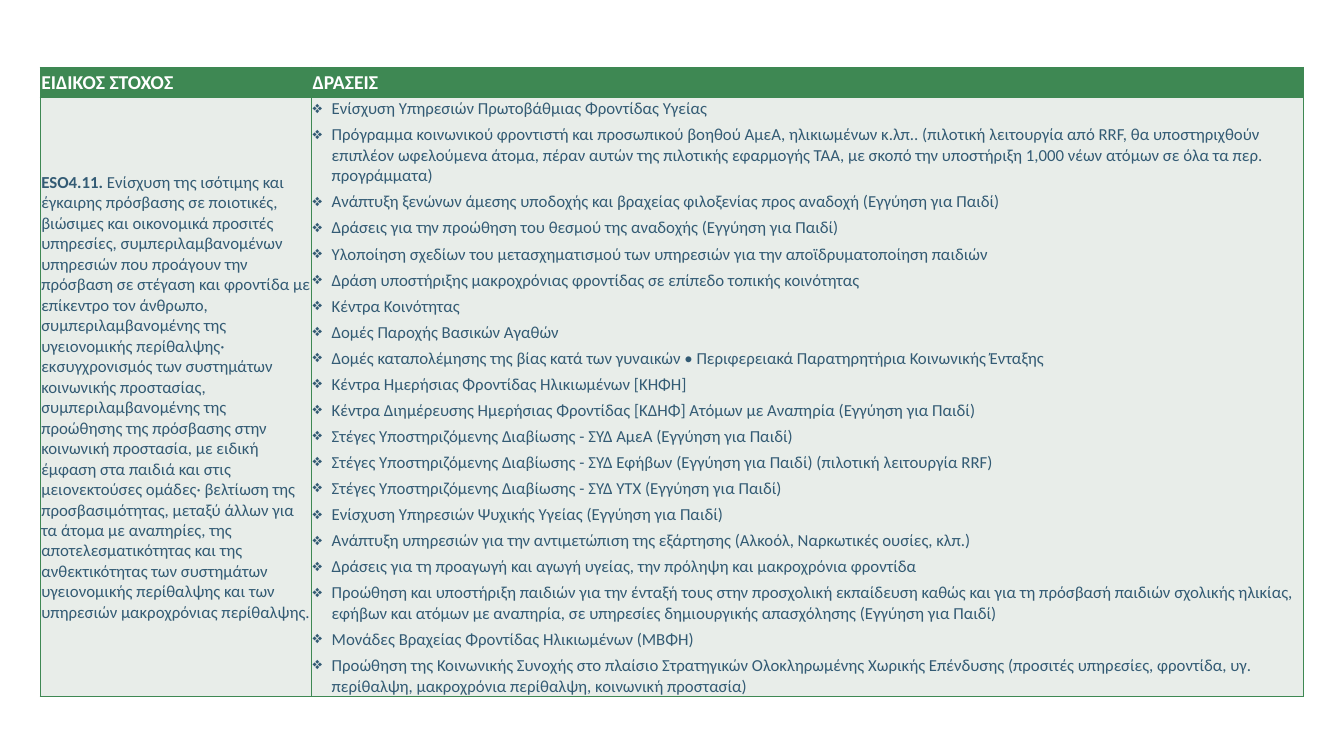
from lxml import etree
from pptx import Presentation
from pptx.dml.color import RGBColor
from pptx.enum.text import MSO_ANCHOR
from pptx.oxml.ns import qn
from pptx.util import Inches, Pt

MIDDLE = MSO_ANCHOR.MIDDLE
FONT = "Calibri"
GREEN, PALE, WHITE, SLATE = "3E8853", "E8EDE9", "FFFFFF", "335B74"

# Table geometry in inches
TABLE_LEFT, TABLE_TOP = 0.4, 0.67
COLUMNS = (2.69, 9.84)
ROWS = (0.3, 5.86)
BULLET_INDENT = 0.19

HEADINGS = ("ΕΙΔΙΚΟΣ ΣΤΟΧΟΣ", "ΔΡΑΣΕΙΣ")
GOAL_CODE = "ESO4.11. "
GOAL_TEXT = (
    "Ενίσχυση της ισότιμης και έγκαιρης πρόσβασης σε ποιοτικές, βιώσιμες και "
    "οικονομικά προσιτές υπηρεσίες, συμπεριλαμβανομένων υπηρεσιών που προάγουν την "
    "πρόσβαση σε στέγαση και φροντίδα με επίκεντρο τον άνθρωπο, συμπεριλαμβανομένης "
    "της υγειονομικής περίθαλψης· εκσυγχρονισμός των συστημάτων κοινωνικής προστασίας, "
    "συμπεριλαμβανομένης της προώθησης της πρόσβασης στην κοινωνική προστασία, με "
    "ειδική έμφαση στα παιδιά και στις μειονεκτούσες ομάδες· βελτίωση της "
    "προσβασιμότητας, μεταξύ άλλων για τα άτομα με αναπηρίες, της "
    "αποτελεσματικότητας και της ανθεκτικότητας των συστημάτων υγειονομικής "
    "περίθαλψης και των υπηρεσιών μακροχρόνιας περίθαλψης."
)
ACTIONS = (
    "Ενίσχυση Υπηρεσιών Πρωτοβάθμιας Φροντίδας Υγείας",
    "Πρόγραμμα κοινωνικού φροντιστή και προσωπικού βοηθού ΑμεΑ, ηλικιωμένων κ.λπ.. "
    "(πιλοτική λειτουργία από RRF, θα υποστηριχθούν επιπλέον ωφελούμενα άτομα, πέραν "
    "αυτών της πιλοτικής εφαρμογής ΤΑΑ, με σκοπό την υποστήριξη 1,000 νέων ατόμων σε "
    "όλα τα περ. προγράμματα)",
    "Ανάπτυξη ξενώνων άμεσης υποδοχής και βραχείας φιλοξενίας προς αναδοχή (Εγγύηση για Παιδί)",
    "Δράσεις για την προώθηση του θεσμού της αναδοχής (Εγγύηση για Παιδί)",
    "Υλοποίηση σχεδίων του μετασχηματισμού των υπηρεσιών για την αποϊδρυματοποίηση παιδιών",
    "Δράση υποστήριξης μακροχρόνιας φροντίδας σε επίπεδο τοπικής κοινότητας",
    "Κέντρα Κοινότητας",
    "Δομές Παροχής Βασικών Αγαθών",
    "Δομές καταπολέμησης της βίας κατά των γυναικών • Περιφερειακά Παρατηρητήρια "
    "Κοινωνικής Ένταξης",
    "Κέντρα Ημερήσιας Φροντίδας Ηλικιωμένων [ΚΗΦΗ]",
    "Κέντρα Διημέρευσης Ημερήσιας Φροντίδας [ΚΔΗΦ] Ατόμων με Αναπηρία (Εγγύηση για Παιδί)",
    "Στέγες Υποστηριζόμενης Διαβίωσης - ΣΥΔ ΑμεΑ (Εγγύηση για Παιδί)",
    "Στέγες Υποστηριζόμενης Διαβίωσης - ΣΥΔ Εφήβων (Εγγύηση για Παιδί) "
    "(πιλοτική λειτουργία RRF)",
    "Στέγες Υποστηριζόμενης Διαβίωσης - ΣΥΔ ΥΤΧ (Εγγύηση για Παιδί)",
    "Ενίσχυση Υπηρεσιών Ψυχικής Υγείας (Εγγύηση για Παιδί)",
    "Ανάπτυξη υπηρεσιών για την αντιμετώπιση της εξάρτησης (Αλκοόλ, Ναρκωτικές ουσίες, κλπ.)",
    "Δράσεις για τη προαγωγή και αγωγή υγείας, την πρόληψη και μακροχρόνια φροντίδα",
    "Προώθηση και υποστήριξη παιδιών για την ένταξή τους στην προσχολική εκπαίδευση "
    "καθώς και για τη πρόσβασή παιδιών σχολικής ηλικίας, εφήβων και ατόμων με αναπηρία, "
    "σε υπηρεσίες δημιουργικής απασχόλησης (Εγγύηση για Παιδί)",
    "Μονάδες Βραχείας Φροντίδας Ηλικιωμένων (ΜΒΦΗ)",
    "Προώθηση της Κοινωνικής Συνοχής στο πλαίσιο Στρατηγικών Ολοκληρωμένης Χωρικής "
    "Επένδυσης (προσιτές υπηρεσίες, φροντίδα, υγ. περίθαλψη, μακροχρόνια περίθαλψη, "
    "κοινωνική προστασία)",
)


def color(hex_string):
    return RGBColor.from_string(hex_string)


def add_run(paragraph, text, size, hex_color, bold=False):
    run = paragraph.add_run()
    run.text = text
    run.font.name = FONT
    run.font.size = Pt(size)
    run.font.bold = bold
    run.font.color.rgb = color(hex_color)


def add_bullet(paragraph):
    properties = paragraph._p.get_or_add_pPr()
    properties.set("marL", str(Inches(BULLET_INDENT)))
    properties.set("indent", str(-Inches(BULLET_INDENT)))
    etree.SubElement(properties, qn("a:buChar"), char="❖")


def style_cell(cell, fill):
    cell.margin_left = cell.margin_right = cell.margin_top = Inches(0.01)
    cell.margin_bottom = 0
    cell.vertical_anchor = MIDDLE
    properties = cell._tc.get_or_add_tcPr()
    for side in ("a:lnL", "a:lnR", "a:lnT", "a:lnB"):
        border = etree.SubElement(properties, qn(side), w=str(Pt(1)))
        solid = etree.SubElement(border, qn("a:solidFill"))
        etree.SubElement(solid, qn("a:srgbClr"), val=GREEN)
    cell.fill.solid()
    cell.fill.fore_color.rgb = color(fill)


def fill_heading(cell, text):
    style_cell(cell, GREEN)
    paragraph = cell.text_frame.paragraphs[0]
    paragraph.space_after = Pt(6)
    add_run(paragraph, text, 14, WHITE, bold=True)


def fill_goal(cell):
    style_cell(cell, PALE)
    paragraph = cell.text_frame.paragraphs[0]
    paragraph.space_after = Pt(6)
    add_run(paragraph, GOAL_CODE, 12, SLATE, bold=True)
    add_run(paragraph, GOAL_TEXT, 12, SLATE)


def fill_actions(cell):
    style_cell(cell, PALE)
    frame = cell.text_frame
    for index, action in enumerate(ACTIONS):
        paragraph = frame.add_paragraph() if index else frame.paragraphs[0]
        add_bullet(paragraph)
        paragraph.space_after = Pt(4)
        add_run(paragraph, action, 12, SLATE)


def add_goal_table(slide, left, top, columns, rows):
    table = slide.shapes.add_table(
        len(rows), len(columns), Inches(left), Inches(top),
        Inches(sum(columns)), Inches(sum(rows))).table
    for column, width in zip(table.columns, columns):
        column.width = Inches(width)
    for row, height in zip(table.rows, rows):
        row.height = Inches(height)
    for index, heading in enumerate(HEADINGS):
        fill_heading(table.cell(0, index), heading)
    fill_goal(table.cell(1, 0))
    fill_actions(table.cell(1, 1))


def main():
    presentation = Presentation()
    presentation.slide_width = Inches(13.33)
    presentation.slide_height = Inches(7.5)
    slide = presentation.slides.add_slide(presentation.slide_layouts[6])
    add_goal_table(slide, TABLE_LEFT, TABLE_TOP, COLUMNS, ROWS)
    presentation.save("out.pptx")


if __name__ == "__main__":
    main()
